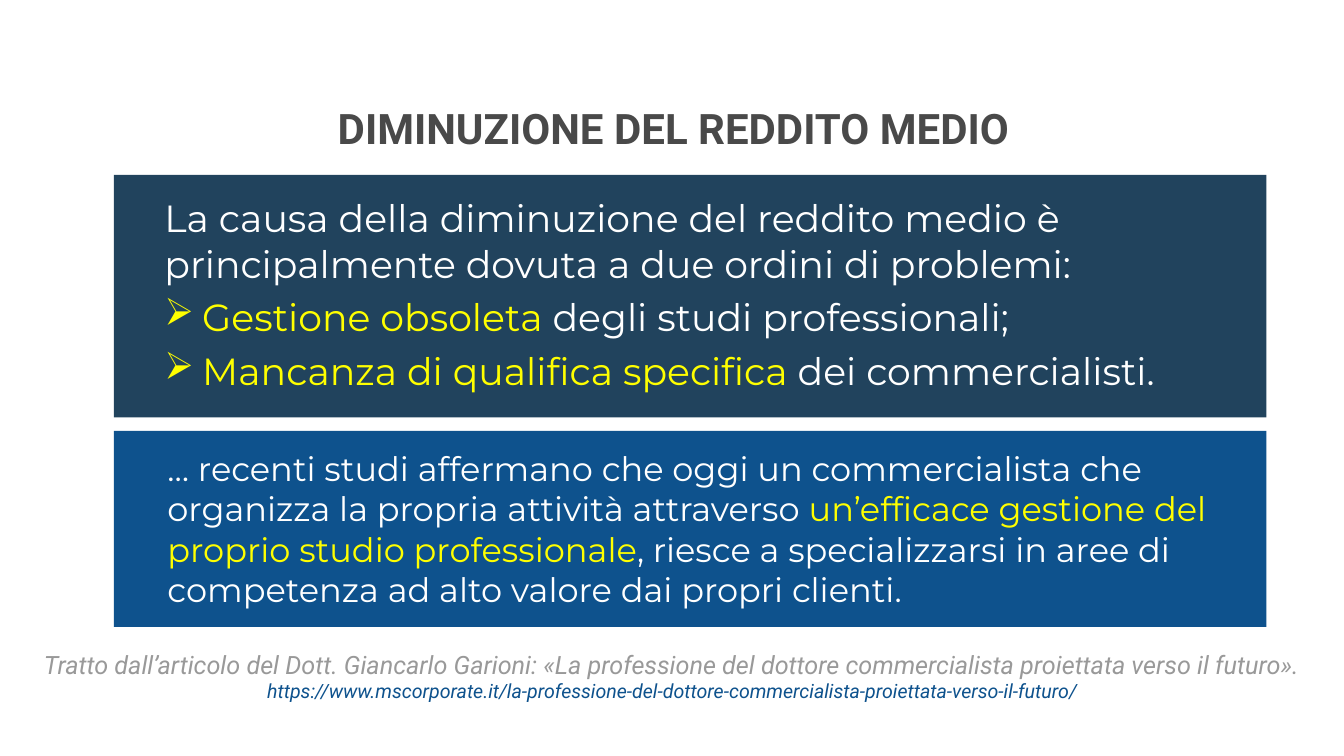
from pptx import Presentation
from pptx import util as u
from pptx.dml import color
from pptx.enum import shapes, text
from lxml import etree
from pptx.oxml import ns

PX = 9144
COLORS = {
    "navy": "21435D", "blue": "0E528D", "white": "FFFFFF",
    "yellow": "FFFF00", "dark": "494949", "grey": "999999",
}
TITLE = {"name": "Roboto", "size": u.Pt(60), "bold": True}
SOURCE = {"name": "Roboto", "size": u.Pt(36), "italic": True}
LINK = {**SOURCE, "size": u.Pt(28)}
CAUSE = {"name": "Montserrat", "size": u.Pt(54)}
STUDY = {"name": "Montserrat", "size": u.Pt(48)}
CENTER = {"alignment": text.PP_ALIGN.CENTER}
SPACED = {"space_after": u.Pt(12)}


class Deck:
    """Draws styled elements on the current slide, with lengths in px."""

    def __init__(self, width, height):
        self.prs = Presentation()
        self.prs.slide_width, self.prs.slide_height = width * PX, height * PX
        self.s = self.prs.slides.add_slide(self.prs.slide_layouts[6])

    def rgb(self, name):
        return color.RGBColor.from_string(COLORS[name])

    def apply(self, target, values):
        for key, value in values.items():
            setattr(target, key, value)

    def panel(self, box, fill):
        sp = self.s.shapes.add_shape(
            shapes.MSO_SHAPE.RECTANGLE, *(v * PX for v in box))
        sp.shadow.inherit = False
        sp.fill.solid()
        sp.fill.fore_color.rgb = self.rgb(fill)
        sp.line.fill.background()

    def textbox(self, box, wrap=True):
        tf = self.s.shapes.add_textbox(*(v * PX for v in box)).text_frame
        inset = 5 * PX
        self.apply(tf, {
            "word_wrap": wrap,
            "auto_size": text.MSO_AUTO_SIZE.SHAPE_TO_FIT_TEXT,
            "margin_left": inset, "margin_right": inset,
            "margin_top": inset, "margin_bottom": inset,
        })
        return tf

    def paragraph(self, tf, runs, font, layout, bullet=None):
        p = tf.paragraphs[0]
        if p.runs:
            p = tf.add_paragraph()
        if bullet:
            self.bullet(p, bullet, 75)
        self.apply(p, layout)
        for words, fill in runs:
            r = p.add_run()
            r.text = words
            self.apply(r.font, font)
            r.font.color.rgb = self.rgb(fill)

    def bullet(self, p, char, indent):
        pr = p._p.get_or_add_pPr()
        pr.set("marL", str(indent * PX))
        pr.set("indent", str(-indent * PX))
        etree.SubElement(pr, ns.qn("a:buChar")).set("char", char)


def main():
    deck = Deck(2665, 1500)
    deck.panel((226, 347, 2285, 481), "navy")
    deck.panel((226, 855, 2285, 389), "blue")

    tf = deck.textbox((3, 198, 2665, 111))
    deck.paragraph(tf, [("DIMINUZIONE DEL REDDITO MEDIO", "dark")], TITLE, CENTER)

    tf = deck.textbox((321, 382, 2118, 407))
    deck.paragraph(tf, [(
        "La causa della diminuzione del reddito medio è principalmente "
        "dovuta a due ordini di problemi:", "white")], CAUSE, SPACED)
    for problem, rest in (
        ("Gestione obsoleta ", "degli studi professionali;"),
        ("Mancanza di qualifica specifica ", "dei commercialisti."),
    ):
        deck.paragraph(tf, [(problem, "yellow"), (rest, "white")],
                       CAUSE, SPACED, bullet="➢")

    tf = deck.textbox((327, 884, 2073, 333))
    deck.paragraph(tf, [
        ("… recenti studi affermano che oggi un commercialista che organizza "
         "la propria attività attraverso ", "white"),
        ("un’efficace gestione del proprio studio professionale", "yellow"),
        (", riesce a specializzarsi in aree di competenza ad alto valore "
         "dai propri clienti.", "white"),
    ], STUDY, SPACED)

    tf = deck.textbox((37, 1283, 2591, 118), wrap=False)
    deck.paragraph(tf, [(
        "Tratto dall’articolo del Dott. Giancarlo Garioni: «La professione del "
        "dottore commercialista proiettata verso il futuro».", "grey")],
        SOURCE, CENTER)
    deck.paragraph(tf, [(
        "https://www.mscorporate.it/la-professione-del-dottore-commercialista-"
        "proiettata-verso-il-futuro/", "blue")], LINK, CENTER)

    deck.prs.save("out.pptx")


if __name__ == "__main__":
    main()
